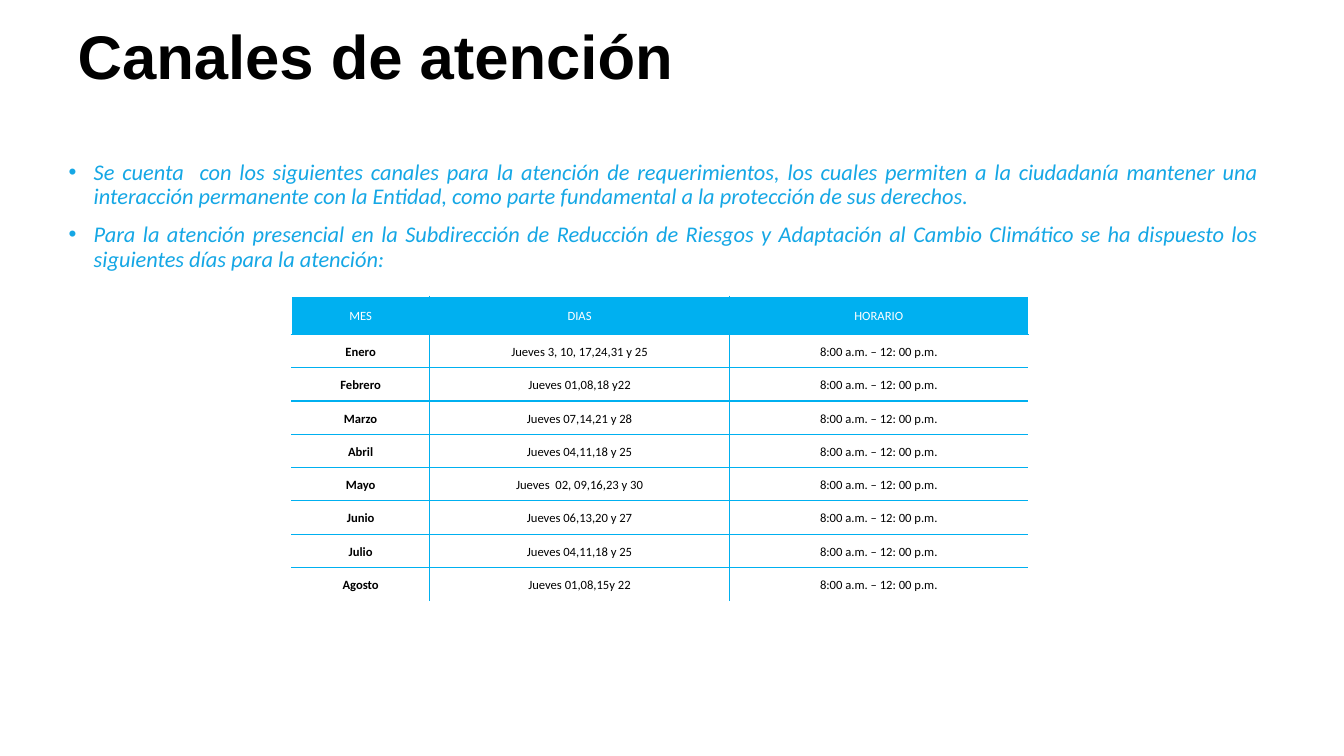
from lxml import etree
from pptx import Presentation
from pptx.dml.color import RGBColor
from pptx.enum.text import MSO_ANCHOR, MSO_AUTO_SIZE, PP_ALIGN
from pptx.oxml.ns import qn
from pptx.util import Pt

MIDDLE, TOP = MSO_ANCHOR.MIDDLE, MSO_ANCHOR.TOP
LEFT, CENTER, JUSTIFY = PP_ALIGN.LEFT, PP_ALIGN.CENTER, PP_ALIGN.JUSTIFY
NO_AUTOFIT = MSO_AUTO_SIZE.NONE
BLACK, WHITE, CYAN, TEXT_BLUE = "000000", "FFFFFF", "00B0F0", "15A7E5"


def style_font(font, name, size, color, bold=False, italic=False):
    font.name, font.size = name, Pt(size)
    font.bold, font.italic = bold, italic
    font.color.rgb = RGBColor.from_string(color)


def add_border(cell, side, color):
    """Draw one cell edge (L, R, T or B); a color of None hides it."""
    line = etree.SubElement(cell._tc.get_or_add_tcPr(), qn(f"a:ln{side}"), w=str(Pt(1)))
    if color is None:
        etree.SubElement(line, qn("a:noFill"))
    else:
        fill = etree.SubElement(line, qn("a:solidFill"))
        etree.SubElement(fill, qn("a:srgbClr"), val=color)


prs = Presentation()
prs.slide_width, prs.slide_height = Pt(960), Pt(540)
slide = prs.slides.add_slide(prs.slide_layouts[1])

# Title
title = slide.shapes.title
title.left, title.top, title.width, title.height = Pt(48.24), Pt(9.36), Pt(696.96), Pt(66.96)
title.text_frame.text = "Canales de atención"
title.text_frame.auto_size = NO_AUTOFIT
title.text_frame.vertical_anchor = MIDDLE
heading = title.text_frame.paragraphs[0]
heading.alignment, heading.line_spacing = LEFT, 0.9
style_font(heading.runs[0].font, "Arial", 44, BLACK, bold=True)

# Introduction
intro = slide.placeholders[1]
intro.left, intro.top, intro.width, intro.height = Pt(41.76), Pt(111.6), Pt(864), Pt(118.8)
intro.text_frame.text = (
    "Se cuenta  con los siguientes canales para la atención de requerimientos, los cuales "
    "permiten a la ciudadanía mantener una interacción permanente con la Entidad, como parte "
    "fundamental a la protección de sus derechos.\n"
    "Para la atención presencial en la Subdirección de Reducción de Riesgos y Adaptación al "
    "Cambio Climático se ha dispuesto los siguientes días para la atención:"
)
intro.text_frame.auto_size = NO_AUTOFIT
intro.text_frame.vertical_anchor = TOP
for index, paragraph in enumerate(intro.text_frame.paragraphs):
    properties = paragraph._p.get_or_add_pPr()
    properties.set("marL", str(Pt(18)))
    properties.set("indent", str(-Pt(18)))
    etree.SubElement(properties, qn("a:buFont"), typeface="Arial")
    etree.SubElement(properties, qn("a:buChar"), char="•")
    paragraph.alignment, paragraph.line_spacing = JUSTIFY, 0.9
    paragraph.space_before = Pt(10 if index else 0)
    style_font(paragraph.runs[0].font, "Calibri", 16, TEXT_BLUE, italic=True)

# Schedule
HOURS = "8:00 a.m. – 12: 00 p.m."
days_by_month = {
    "Enero": "Jueves 3, 10, 17,24,31 y 25",
    "Febrero": "Jueves 01,08,18 y22",
    "Marzo": "Jueves 07,14,21 y 28",
    "Abril": "Jueves 04,11,18 y 25",
    "Mayo": "Jueves  02, 09,16,23 y 30",
    "Junio": "Jueves 06,13,20 y 27",
    "Julio": "Jueves 04,11,18 y 25",
    "Agosto": "Jueves 01,08,15y 22",
}
schedule = [("MES", "DIAS", "HORARIO")]
schedule += [(month, days, HOURS) for month, days in days_by_month.items()]
column_widths = [99, 213.75, 213.75]
last_row, last_column = len(schedule) - 1, len(column_widths) - 1

table = slide.shapes.add_table(
    len(schedule), len(column_widths), Pt(208.08), Pt(211.68), Pt(526.5), Pt(217.6)
).table
table.horz_banding = False
for column, width in zip(table.columns, column_widths):
    column.width = Pt(width)

for r, entries in enumerate(schedule):
    is_header = r == 0
    table.rows[r].height = Pt(27.2 if is_header else 23.8)
    side_edge = WHITE if is_header else None
    for c, entry in enumerate(entries):
        cell = table.cell(r, c)
        add_border(cell, "L", CYAN if c else side_edge)
        add_border(cell, "R", CYAN if c < last_column else side_edge)
        add_border(cell, "T", WHITE if is_header else CYAN)
        add_border(cell, "B", CYAN if r < last_row else None)
        cell.fill.solid()
        cell.fill.fore_color.rgb = RGBColor.from_string(CYAN if is_header else WHITE)
        cell.margin_left = cell.margin_right = Pt(7.2)
        cell.margin_top = cell.margin_bottom = Pt(0)
        cell.vertical_anchor = MIDDLE
        cell.text_frame.text = entry
        label = cell.text_frame.paragraphs[0]
        label.alignment, label.line_spacing = CENTER, 1.15
        style_font(label.runs[0].font, "Calibri", 9, WHITE if is_header else BLACK,
                   bold=c == 0 and not is_header)

prs.save("out.pptx")
